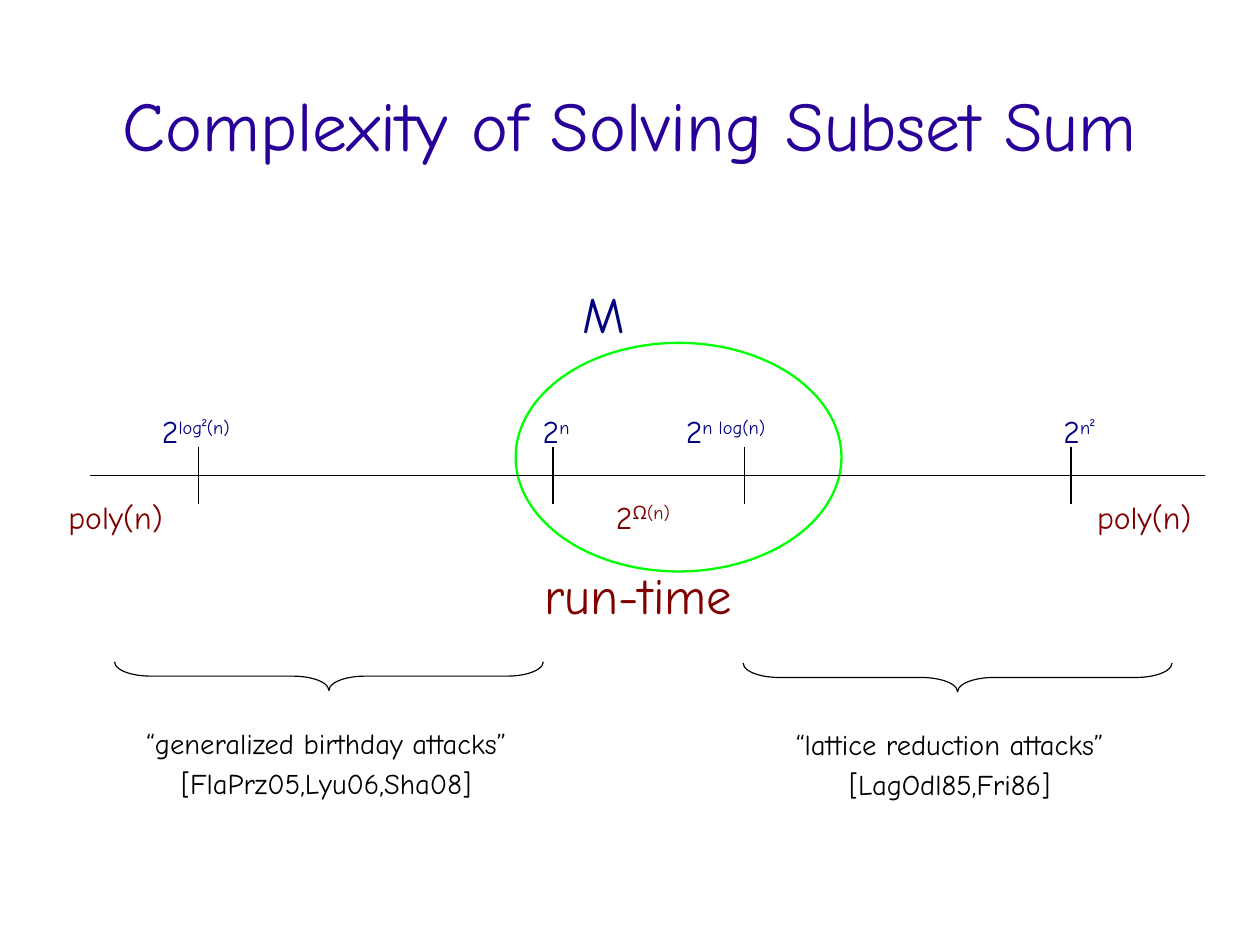
import pptx
import pptx.util
import pptx.dml.color
import pptx.enum.shapes
import pptx.enum.text
import pptx.oxml.ns
import lxml.etree

Cm = pptx.util.Cm
Pt = pptx.util.Pt
Align = pptx.enum.text.PP_ALIGN
Shape = pptx.enum.shapes.MSO_SHAPE

COLORS = {
    "title": "280099",
    "density": "000080",
    "runtime": "800000",
    "highlight": "00FF00",
    "ink": "000000",
}


class SlideBuilder:
    font_name = "Comic Neue"
    line_spacing = 1.17
    thin = 0.75

    def __init__(self, slide):
        self.slide = slide

    def color(self, name):
        return pptx.dml.color.RGBColor.from_string(COLORS[name])

    def text(self, box, lines, size, color, align=Align.LEFT, superscript="", raised=30):
        text_box = self.slide.shapes.add_textbox(*map(Cm, box))
        frame = text_box.text_frame
        frame.word_wrap = True
        for index, line in enumerate(lines):
            paragraph = frame.paragraphs[0] if index == 0 else frame.add_paragraph()
            paragraph.alignment = align
            paragraph.line_spacing = self.line_spacing
            paragraph.add_run().text = line
            if superscript:
                run = paragraph.add_run()
                run.text = superscript
                run._r.get_or_add_rPr().set("baseline", str(raised * 1000))
            paragraph.font.name = self.font_name
            paragraph.font.size = Pt(size)
            paragraph.font.color.rgb = self.color(color)
        return frame

    def title(self, box, words):
        frame = self.text(box, [words], 44, "title", Align.CENTER)
        frame.vertical_anchor = pptx.enum.text.MSO_ANCHOR.MIDDLE
        frame.margin_left = frame.margin_right = 0
        frame.margin_top = frame.margin_bottom = 0

    def line(self, start, end):
        connector = self.slide.shapes.add_connector(
            pptx.enum.shapes.MSO_CONNECTOR.STRAIGHT, *map(Cm, start + end))
        connector.line.color.rgb = self.color("ink")
        connector.line.width = Pt(self.thin)
        lxml.etree.SubElement(connector._element.spPr, pptx.oxml.ns.qn("a:effectLst"))

    def outline(self, kind, box, color, width):
        shape = self.slide.shapes.add_shape(kind, *map(Cm, box))
        shape.shadow.inherit = False
        shape.fill.background()
        shape.line.color.rgb = self.color(color)
        shape.line.width = Pt(width)
        return shape

    def brace(self, left, top):
        shape = self.outline(Shape.LEFT_BRACE, (left, top, 0.64, 9.53), "ink", self.thin)
        shape.adjustments[0] = 1.25
        shape.adjustments[1] = 0.5
        shape.rotation = 270


def main():
    presentation = pptx.Presentation()
    presentation.slide_width = Cm(28)
    presentation.slide_height = Cm(21)
    builder = SlideBuilder(presentation.slides.add_slide(presentation.slide_layouts[6]))

    builder.outline(Shape.OVAL, (11.46, 7.62, 7.24, 5.08), "highlight", 1.45)
    builder.title((1.4, 0.84, 25.2, 3.5), "Complexity of Solving Subset Sum")

    axis_y = 10.57
    half_tick = 0.64
    builder.line((2.01, axis_y), (26.77, axis_y))
    for x in (4.42, 12.29, 16.54, 23.8):
        builder.line((x, axis_y - half_tick), (x, axis_y + half_tick))

    builder.text((12.7, 5.92, 4.6, 1.83), ["M"], 32, "density")
    builder.text((11.84, 12.17, 5.08, 1.83), ["run-time"], 32, "runtime")

    for left, width, exponent, align in (
        (3.35, 4.06, "log²(n)", Align.LEFT),
        (11.81, 1.27, "n", Align.LEFT),
        (14.99, 3.18, "n log(n)", Align.LEFT),
        (22.71, 2.54, "n²", Align.CENTER),
    ):
        builder.text((left, 8.89, width, 1.14), ["2"], 20, "density", align, exponent)

    runtime_y = 10.8
    for left, width in ((1.27, 2.79), (24.13, 3.18)):
        builder.text((left, runtime_y, width, 1.14), ["poly(n)"], 20, "runtime")
    builder.text((12.7, runtime_y, 3.18, 1.14), ["2"], 20, "runtime", Align.CENTER, "Ω(n)", 33)

    for brace_left, brace_top, box, lines in (
        (6.99, 10.26, (2.41, 15.88, 9.68, 2.03),
         ["“generalized birthday attacks”", "[FlaPrz05,Lyu06,Sha08]"]),
        (20.96, 10.29, (16.66, 15.9, 8.89, 2.03),
         ["“lattice reduction attacks”", "[LagOdl85,Fri86]"]),
    ):
        builder.brace(brace_left, brace_top)
        builder.text(box, lines, 18, "ink", Align.CENTER)

    presentation.save("out.pptx")


if __name__ == "__main__":
    main()
